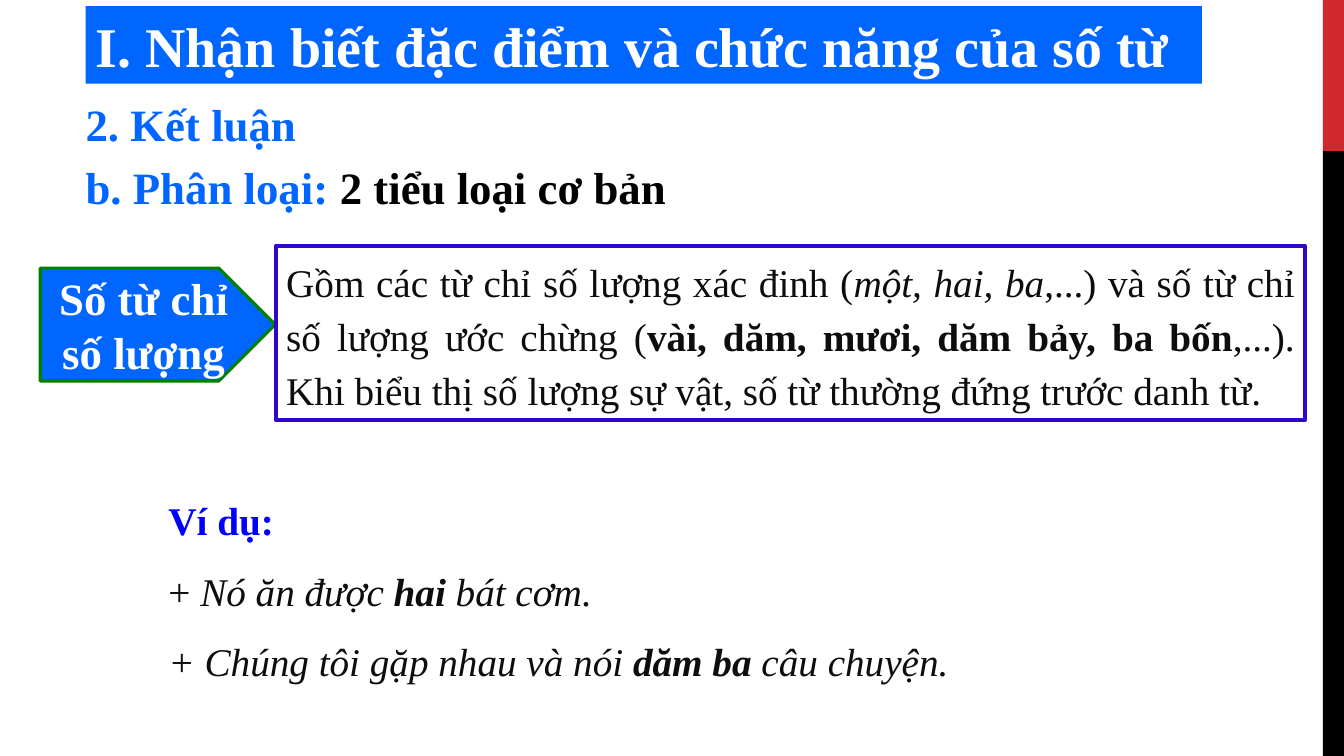
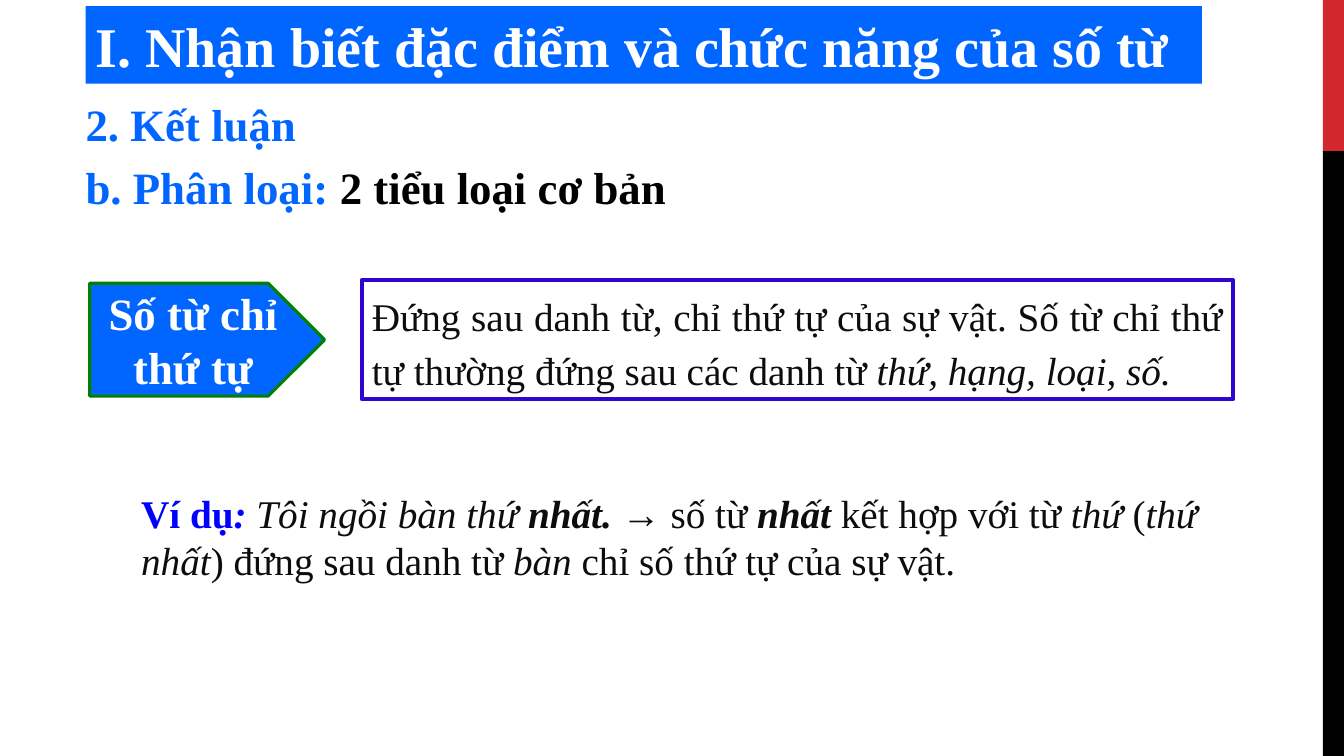
"""Build two lesson slides on the kinds of Vietnamese number words."""
from lxml import etree
from pptx import Presentation
from pptx.dml.color import RGBColor
from pptx.enum import shapes, text
from pptx.oxml.ns import qn
from pptx.util import Inches, Pt

WHITE = RGBColor(0xFF, 0xFF, 0xFF)
BLACK = RGBColor(0x00, 0x00, 0x00)
RED = RGBColor(0xD1, 0x28, 0x2E)
BLUE = RGBColor(0x00, 0x66, 0xFF)
PURE_BLUE = RGBColor(0x00, 0x00, 0xFF)
INDIGO = RGBColor(0x30, 0x05, 0xCD)
GREEN = RGBColor(0x00, 0x80, 0x00)
INK = RGBColor(0x0D, 0x0D, 0x0D)

FONT = "Times New Roman"
PLAIN = {"alignment": text.PP_ALIGN.LEFT, "line_spacing": 1.0,
         "space_before": Pt(0), "space_after": Pt(0)}
CENTRED = PLAIN | {"alignment": text.PP_ALIGN.CENTER}
SPACED = {"alignment": text.PP_ALIGN.JUSTIFY, "line_spacing": 1.15,
          "space_before": Pt(6), "space_after": Pt(6)}

TITLE = "I. Nhận biết đặc điểm và chức năng của số từ"
SUBHEADS = [
    (0.83, 2.48, [("2. Kết luận", "b", BLUE)]),
    (1.46, 6.67, [("b. Phân loại: ", "b", BLUE), ("2 tiểu loại cơ bản", "b", BLACK)]),
]
LESSONS = [
    {
        "label": "Số từ chỉ số lượng",
        "label_at": (0.4, 2.66, 2.33, 1.12),
        "definition": [
            ("Gồm các từ chỉ số lượng xác đinh (", "", INK),
            ("một, hai, ba", "i", INK),
            (",...) và số từ chỉ số lượng ước chừng (", "", INK),
            ("vài, dăm, mươi, dăm bảy, ba bốn", "b", INK),
            (",...). Khi biểu thị số lượng sự vật, số từ thường đứng trước danh từ.", "", INK),
        ],
        "definition_at": (2.74, 2.44, 10.2, 1.73),
        "examples": [
            [("Ví dụ:", "b", PURE_BLUE)],
            [("+ ", "", INK), ("Nó ăn được ", "i", INK), ("hai", "bi", INK),
             (" bát cơm.", "i", INK)],
            [("+ Chúng tôi gặp nhau và nói ", "i", INK), ("dăm ba", "bi", INK),
             (" câu chuyện.", "i", INK)],
        ],
        "examples_at": (1.57, 4.8, 11.18, 2.06),
        "examples_format": SPACED,
    },
    {
        "label": "Số từ chỉ thứ tự",
        "label_at": (0.89, 2.81, 2.33, 1.12),
        "definition": [
            ("Đứng sau danh từ, chỉ thứ tự của sự vật. Số từ chỉ thứ tự thường "
             "đứng sau các danh từ ", "", INK),
            ("thứ, hạng, loại, số.", "i", INK),
        ],
        "definition_at": (3.59, 2.78, 8.64, 1.18),
        "examples": [
            [("Ví dụ", "b", PURE_BLUE), (": ", "bi", PURE_BLUE),
             ("Tôi ngồi bàn thứ ", "i", INK), ("nhất. ", "bi", INK),
             ("→ số từ ", "", INK), ("nhất", "bi", INK),
             (" kết hợp với từ ", "", INK), ("thứ", "i", INK), (" (", "", INK),
             ("thứ nhất", "i", INK), (") đứng sau danh từ ", "", INK),
             ("bàn", "i", INK), (" chỉ số thứ tự của sự vật.", "", INK)],
        ],
        "examples_at": (1.3, 4.8, 10.73, 1.04),
        "examples_format": PLAIN,
    },
]


def place(shape, box):
    for side, length in zip(("left", "top", "width", "height"), box):
        setattr(shape, side, Inches(length))


def write(shape, paragraphs, size, layout, anchor=text.MSO_ANCHOR.TOP):
    frame = shape.text_frame
    frame.word_wrap = True
    frame.auto_size = text.MSO_AUTO_SIZE.NONE
    frame.vertical_anchor = anchor
    for index, runs in enumerate(paragraphs):
        paragraph = frame.add_paragraph() if index else frame.paragraphs[0]
        for key, value in layout.items():
            setattr(paragraph, key, value)
        for words, style, color in runs:
            run = paragraph.add_run()
            run.text = words
            look = {"name": FONT, "size": Pt(size), "bold": "b" in style, "italic": "i" in style}
            for key, value in look.items():
                setattr(run.font, key, value)
            run.font.color.rgb = color


prs = Presentation()
prs.slide_width, prs.slide_height = Inches(13.33), Inches(7.5)
master_tree = prs.slide_master.shapes.element
slides = [prs.slides.add_slide(prs.slide_layouts[1]) for _ in LESSONS]

for number, (top, height, color) in enumerate([(0, 1.5, RED), (1.5, 6, BLACK)]):
    band = slides[0].shapes.add_shape(
        shapes.MSO_SHAPE.RECTANGLE, Inches(13.12), Inches(top), Inches(0.21), Inches(height))
    band.shadow.inherit = False
    band.fill.solid()
    band.fill.fore_color.rgb = color
    band.line.fill.background()
    band.element.xpath(".//p:cNvPr")[0].set("id", str(101 + number))
    master_tree.append(band.element)

for slide, lesson in zip(slides, LESSONS):
    heading = slide.shapes.title
    place(heading, (0.85, 0.06, 11.07, 0.77))
    heading.fill.solid()
    heading.fill.fore_color.rgb = BLUE
    write(heading, [[(TITLE, "b", WHITE)]], 40, PLAIN)

    for top, width, runs in SUBHEADS:
        subhead = slide.shapes.add_textbox(
            Inches(0.75), Inches(top), Inches(width), Inches(0.72))
        write(subhead, [runs], 32, SPACED)

    label = slide.shapes.add_shape(
        shapes.MSO_SHAPE.PENTAGON, *map(Inches, lesson["label_at"]))
    label.fill.solid()
    label.fill.fore_color.rgb = BLUE
    write(label, [[(lesson["label"], "b", WHITE)]], 32, CENTRED, text.MSO_ANCHOR.MIDDLE)

    definition = slide.shapes.add_shape(
        shapes.MSO_SHAPE.RECTANGLE, *map(Inches, lesson["definition_at"]))
    definition.fill.background()
    write(definition, [lesson["definition"]], 28, SPACED)

    for outlined, color, weight in [(label, GREEN, 2.25), (definition, INDIGO, 3)]:
        outlined.shadow.inherit = False
        outlined.line.color.rgb = color
        outlined.line.width = Pt(weight)

    examples = slide.placeholders[1]
    place(examples, lesson["examples_at"])
    write(examples, lesson["examples"], 28, lesson["examples_format"])
    for paragraph in examples.text_frame.paragraphs:
        properties = paragraph._p.get_or_add_pPr()
        properties.set("marL", "0")
        properties.set("indent", "0")
        etree.SubElement(properties, qn("a:buNone"))

prs.save("out.pptx")
